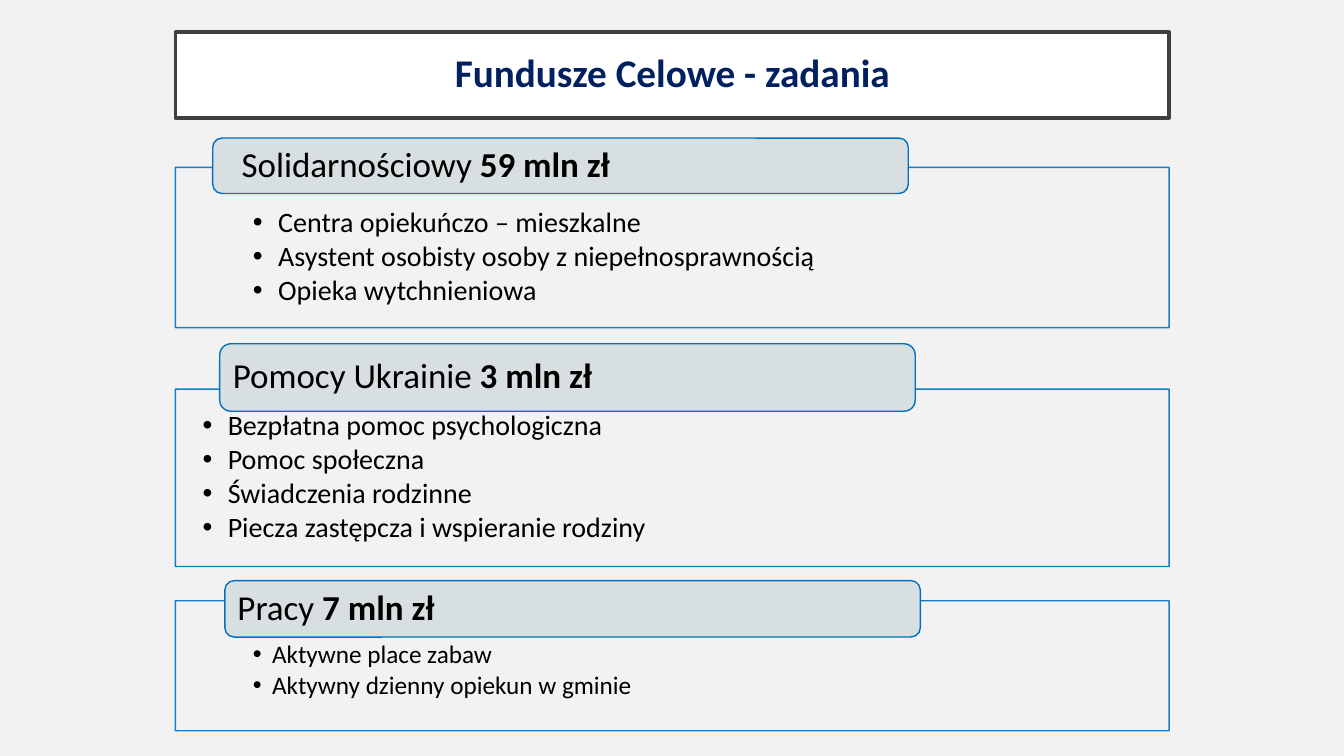
from lxml.etree import SubElement
from pptx import Presentation
from pptx.dml.color import RGBColor
from pptx.enum.shapes import MSO_SHAPE as Preset
from pptx.enum.text import MSO_ANCHOR as Anchor, PP_ALIGN as Align
from pptx.oxml.ns import qn
from pptx.util import Inches, Pt

WIDTH, HEIGHT = Inches(13.333), Inches(7.5)
LEFT, SPAN, TAB_SPAN = 13.05, 73.95, 51.75
INK, NAVY, BLUE, GRAY = "000000", "002060", "0070C0", "F2F2F2"

FUNDS = [
    {
        "name": "Solidarnościowy ", "amount": "59 mln zł",
        "tasks": ["Centra opiekuńczo – mieszkalne",
                  "Asystent osobisty osoby z niepełnosprawnością",
                  "Opieka wytchnieniowa"],
        "panel": (22.13, 21.2), "tab": (15.83, 18.27, 7.33), "tab_inset": 0.26,
        "insets": (0.77, 0.41, 0.77, 0.16), "anchor": Anchor.TOP,
        "size": 20, "indent": 0.25,
    },
    {
        "name": "Pomocy Ukrainie ", "amount": "3 mln zł",
        "tasks": ["Bezpłatna pomoc psychologiczna", "Pomoc społeczna",
                  "Świadczenia rodzinne", "Piecza zastępcza i wspieranie rodziny"],
        "panel": (51.47, 23.47), "tab": (16.35, 45.47, 8.93), "tab_inset": 0.1,
        "insets": (0.27, 0.14, 0.27, 0.14), "anchor": Anchor.MIDDLE,
        "size": 20, "indent": 0.25,
    },
    {
        "name": "Pracy ", "amount": "7 mln zł",
        "tasks": ["Aktywne place zabaw", "Aktywny dzienny opiekun w gminie"],
        "panel": (79.47, 17.2), "tab": (16.73, 76.8, 7.47), "tab_inset": 0.1,
        "insets": (0.77, 0.41, 0.77, 0.14), "anchor": Anchor.TOP,
        "size": 18, "indent": 0.19,
    },
]


def color(code):
    return RGBColor.from_string(code)


def across(percent):
    return round(WIDTH * percent / 100)


def down(percent):
    return round(HEIGHT * percent / 100)


def apply(target, values):
    for name, value in values.items():
        setattr(target, name, value)


def add_box(page, preset, left, top, width, height, fill, line, weight, insets, anchor):
    box = page.shapes.add_shape(
        preset, across(left), down(top), across(width), down(height))
    box.shadow.inherit = False
    box.fill.solid()
    box.fill.fore_color.rgb = color(fill)
    box.line.color.rgb = color(line)
    box.line.width = Pt(weight)
    sides = ("margin_left", "margin_top", "margin_right", "margin_bottom")
    apply(box.text_frame, dict(zip(sides, map(Inches, insets))))
    apply(box.text_frame, {"word_wrap": True, "vertical_anchor": anchor})
    return box


def fade(box, opacity):
    for shade in box.element.spPr.iter(qn("a:srgbClr")):
        SubElement(shade, qn("a:alpha"), val=str(opacity * 1000))


def add_span(para, text, size, ink=INK, bold=False):
    span = para.add_run()
    span.text = text
    apply(span.font, {"name": "Calibri", "size": Pt(size), "bold": bold})
    span.font.color.rgb = color(ink)


def add_title(page, text):
    box = add_box(page, Preset.RECTANGLE, LEFT, 4.27, SPAN, 11.33,
                  "FFFFFF", "404040", 2.5, [0.2] * 4, Anchor.MIDDLE)
    para = box.text_frame.paragraphs[0]
    apply(para, {"alignment": Align.CENTER, "line_spacing": 0.9})
    add_span(para, text, 28, NAVY, True)


def add_bullet(para, text, size, indent):
    apply(para, {"alignment": Align.LEFT, "level": 1, "line_spacing": 0.9,
                 "space_after": Pt(size * 0.135)})
    add_span(para, text, size)
    layout = para._p.get_or_add_pPr()
    layout.set("marL", str(Inches(indent)))
    layout.set("indent", str(-Inches(indent)))
    SubElement(layout, qn("a:buFont"), typeface="Arial")
    SubElement(layout, qn("a:buChar"), char="•")


def add_panel(page, fund):
    top, height = fund["panel"]
    box = add_box(page, Preset.RECTANGLE, LEFT, top, SPAN, height,
                  GRAY, BLUE, 1, fund["insets"], fund["anchor"])
    fade(box, 90)
    frame = box.text_frame
    for index, task in enumerate(fund["tasks"]):
        para = frame.add_paragraph() if index else frame.paragraphs[0]
        add_bullet(para, task, fund["size"], fund["indent"])


def add_tab(page, fund):
    left, top, height = fund["tab"]
    inset = fund["tab_inset"]
    box = add_box(page, Preset.ROUNDED_RECTANGLE, left, top, TAB_SPAN, height,
                  "D7DFE1", BLUE, 1, (inset, 0, inset, 0), Anchor.MIDDLE)
    para = box.text_frame.paragraphs[0]
    apply(para, {"alignment": Align.LEFT, "line_spacing": 0.9})
    add_span(para, fund["name"], 25)
    add_span(para, fund["amount"], 25, bold=True)


def main():
    deck = Presentation()
    apply(deck, {"slide_width": WIDTH, "slide_height": HEIGHT})
    page = deck.slides.add_slide(deck.slide_layouts[6])
    page.background.fill.solid()
    page.background.fill.fore_color.rgb = color(GRAY)
    add_title(page, "Fundusze Celowe - zadania")
    for fund in FUNDS:
        add_panel(page, fund)
        add_tab(page, fund)
    deck.save("out.pptx")


if __name__ == "__main__":
    main()
